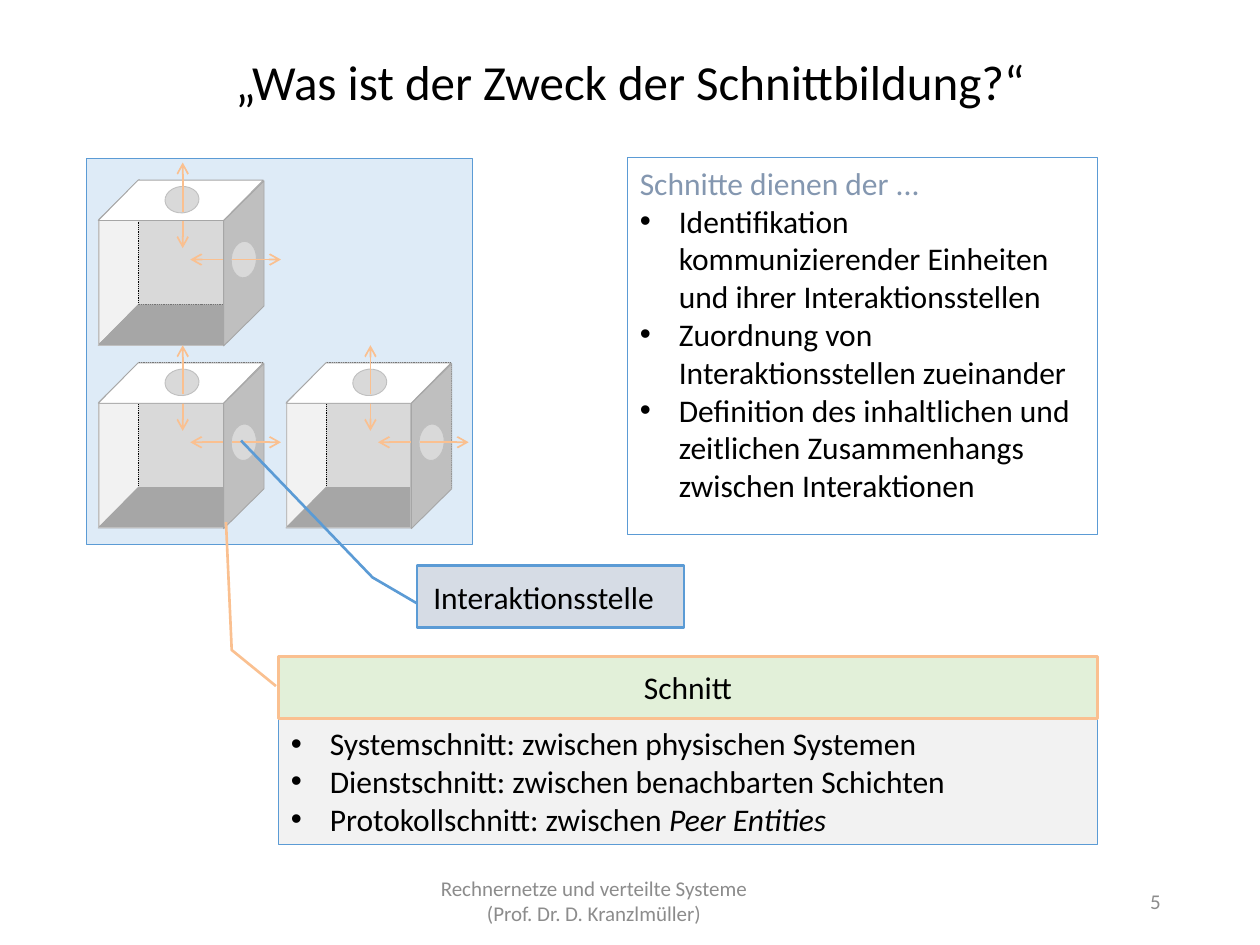
from lxml.etree import SubElement
from pptx import Presentation
from pptx.dml.color import RGBColor
from pptx.enum.dml import MSO_LINE
from pptx.enum.shapes import MSO_CONNECTOR, MSO_SHAPE
from pptx.enum.text import MSO_ANCHOR, PP_ALIGN
from pptx.oxml.ns import qn
from pptx.util import Inches, Pt

BLUE, ORANGE, GREY, EDGE = "5B9BD5", "FAC090", "8C8C8C", "A6A6A6"


def draw(shapes, kind, position, fill, line, width=0.5):
    """Add a preset shape; position is left, top, width, height in inches."""
    shape = shapes.add_shape(kind, *map(Inches, position))
    shape.shadow.inherit = False
    if fill:
        shape.fill.solid()
        shape.fill.fore_color.rgb = RGBColor.from_string(fill)
    else:
        shape.fill.background()
    shape.line.color.rgb = RGBColor.from_string(line)
    shape.line.width = Pt(width)
    return shape


def write(frame, lines, size=18, color="000000", align=PP_ALIGN.LEFT,
          anchor=MSO_ANCHOR.TOP, bullets_from=None):
    """Write one paragraph per line, with bullets from the given index on."""
    frame.word_wrap = True
    frame.vertical_anchor = anchor
    for index, line in enumerate(lines):
        para = frame.paragraphs[0] if index == 0 else frame.add_paragraph()
        para.text = line
        para.alignment = align
        if bullets_from is not None and index >= bullets_from:
            properties = para._p.get_or_add_pPr()
            properties.set("marL", str(Inches(0.31)))
            properties.set("indent", str(-Inches(0.31)))
            SubElement(properties, qn("a:buFont")).set("typeface", "Arial")
            SubElement(properties, qn("a:buChar")).set("char", "•")
        para.font.name = "Calibri"
        para.font.size = Pt(size)
        para.font.color.rgb = RGBColor.from_string(color)


deck = Presentation()
deck.slide_width, deck.slide_height = Inches(10), Inches(7.5)
page = deck.slides.add_slide(deck.slide_layouts[5])

title = page.shapes.title
title.left, title.top, title.width, title.height = map(Inches, (0.69, 0.41, 8.62, 0.6))
write(title.text_frame, ["„Was ist der Zweck der Schnittbildung?“"], 28,
      align=PP_ALIGN.CENTER)
title.text_frame.paragraphs[0].line_spacing = 0.9

# Footer and page number
footer = page.shapes.add_textbox(*map(Inches, (3.31, 6.95, 3.38, 0.4)))
write(footer.text_frame,
      ["Rechnernetze und verteilte Systeme", "(Prof. Dr. D. Kranzlmüller)"],
      12, GREY, PP_ALIGN.CENTER, MSO_ANCHOR.MIDDLE)
footer.text_frame.paragraphs[0]._p.get_or_add_pPr().set("marR", str(Inches(0.57)))
number = page.shapes.add_textbox(*map(Inches, (7.06, 6.95, 2.25, 0.4)))
write(number.text_frame, ["5"], 12, GREY, PP_ALIGN.RIGHT, MSO_ANCHOR.MIDDLE)

# Kinds of cuts
kinds = draw(page.shapes, MSO_SHAPE.RECTANGLE, (2.21, 5.7, 6.5, 1), "F2F2F2", BLUE)
write(kinds.text_frame, [
    "Systemschnitt: zwischen physischen Systemen",
    "Dienstschnitt: zwischen benachbarten Schichten",
    "Protokollschnitt: zwischen ",
], bullets_from=0)
span = kinds.text_frame.paragraphs[-1].add_run()
span.text = "Peer Entities"
span.font.italic = True

# Three open cubes; every part is placed relative to the cube's corner
SLANT, OVAL, BOX = MSO_SHAPE.PARALLELOGRAM, MSO_SHAPE.OVAL, MSO_SHAPE.RECTANGLE
SIDE, DEPTH, LENGTH = 0.99, 0.32, 1.31
parts = [  # kind, left, top, width, height, rotation, fill, line
    (SLANT, -0.49, 0.49, LENGTH, DEPTH, 90, "F2F2F2", EDGE),
    (BOX, DEPTH, 0, SIDE, SIDE, 0, "D9D9D9", "000000"),
    (SLANT, 0, SIDE, LENGTH, DEPTH, 0, EDGE, EDGE),
    (BOX, 0, DEPTH, SIDE, SIDE, 0, None, "BFBFBF"),
    ("arrow", 0.67, 0.29, 0.67, 0.54),
    (SLANT, 0, 0, LENGTH, DEPTH, 0, "FFFFFF", EDGE),
    (OVAL, 0.53, 0.05, 0.27, 0.21, 355.2, "D9D9D9", "BFBFBF"),
    ("arrow", 0.67, 0.25, 0.67, -0.14),
    (SLANT, 0.5, 0.5, LENGTH, DEPTH, 90, "BFBFBF", EDGE),
    (OVAL, 1.01, 0.53, 0.29, 0.2, 94, "D9D9D9", "BFBFBF"),
    ("arrow", 1.06, 0.63, 1.45, 0.63),
    ("arrow", 0.99, 0.63, 0.73, 0.63),
]
cubes = page.shapes.add_group_shape().shapes
draw(cubes, BOX, (0.69, 1.26, 3.06, 3.06), "DEEBF7", BLUE)
for left, top in [(2.27, 2.88), (0.78, 1.43), (0.78, 2.88)]:
    for kind, x, y, *rest in parts:
        if kind == "arrow":
            end_x, end_y = rest
            arrow = cubes.add_connector(
                MSO_CONNECTOR.STRAIGHT,
                *map(Inches, (left + x, top + y, left + end_x, top + end_y)))
            arrow.line.color.rgb = RGBColor.from_string(ORANGE)
            arrow.line.width = Pt(1)
            properties = arrow._element.spPr
            SubElement(properties.find(qn("a:ln")), qn("a:tailEnd")).set("type", "arrow")
            SubElement(properties, qn("a:effectLst"))
            continue
        width, height, rotation, fill, line = rest
        part = draw(cubes, kind, (left + x, top + y, width, height), fill, line)
        part.rotation = rotation
        if kind == SLANT:
            part.adjustments[0] = 0.987
            if rotation:
                part._element.spPr.xfrm.set("flipV", "1")
        if line == "000000":
            part.line.dash_style = MSO_LINE.ROUND_DOT

# Callouts pointing at the cubes
callouts = [
    ("Interaktionsstelle", (3.31, 4.49, 2.12, 0.49), "D6DCE5", BLUE, 0.21,
     (0.605, -0.002, 0.188, -0.167, -2.027, -0.659)),
    ("Schnitt", (2.21, 5.21, 6.5, 0.49), "E2F0D9", ORANGE, 0.1,
     (0.48, -0.003, -0.105, -0.057, -2.174, -0.064)),
]
for label, position, fill, line, right_margin, bends in callouts:
    callout = draw(page.shapes, MSO_SHAPE.LINE_CALLOUT_2, position, fill, line, 1.5)
    for index, bend in enumerate(bends):
        callout.adjustments[index] = bend
    write(callout.text_frame, [label], align=PP_ALIGN.CENTER, anchor=MSO_ANCHOR.MIDDLE)
    callout.text_frame.margin_right = Inches(right_margin)

# Purposes of cuts
purposes = draw(page.shapes, BOX, (4.98, 1.25, 3.73, 2.99), None, BLUE)
write(purposes.text_frame, [
    "Schnitte dienen der ...",
    "Identifikation kommunizierender Einheiten und ihrer Interaktionsstellen",
    "Zuordnung von Interaktionsstellen zueinander",
    "Definition des inhaltlichen und zeitlichen Zusammenhangs zwischen Interaktionen",
], bullets_from=1)
purposes.text_frame.paragraphs[0].font.color.rgb = RGBColor.from_string("8497B0")

deck.save("out.pptx")
